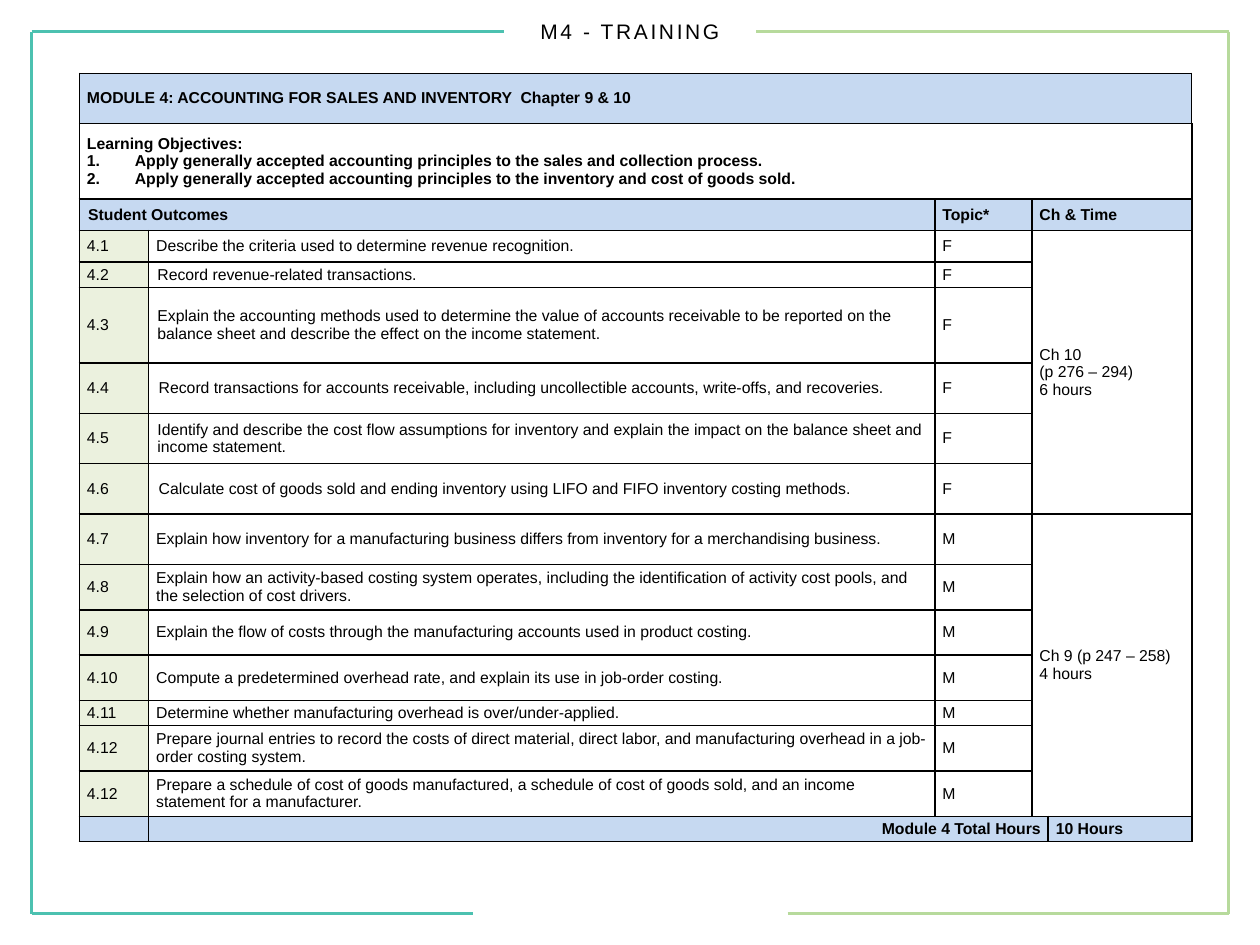
import pptx
import pptx.util
import pptx.dml.color
import pptx.enum.shapes
import pptx.enum.text
import pptx.oxml.ns
from lxml import etree

Inches, Pt = pptx.util.Inches, pptx.util.Pt
RGB = pptx.dml.color.RGBColor.from_string
ALIGN = pptx.enum.text.PP_ALIGN
MIDDLE = pptx.enum.text.MSO_ANCHOR.MIDDLE
qn = pptx.oxml.ns.qn
COLORS = {"teal": "4CC1B0", "lime": "B7DA9C", "heading": "C6D9F1",
          "number": "EBF1DE", "ink": "000000"}

deck = pptx.Presentation()
deck.slide_width, deck.slide_height = Inches(10), Inches(7.5)
W, H = deck.slide_width, deck.slide_height
slide = deck.slides.add_slide(deck.slide_layouts[6])


def add_text(paragraph, text, size=9, bold=False):
    run = paragraph.add_run()
    run.text = text
    run.font.name, run.font.size, run.font.bold = "Arial", Pt(size), bold
    run.font.color.rgb = RGB(COLORS["ink"])
    return run


def fill_cell(cell, lines, bold=False, fill=None, indent=0, spacing=0):
    """Write one paragraph per line and colour the cell."""
    if fill:
        cell.fill.solid()
        cell.fill.fore_color.rgb = RGB(COLORS[fill])
    for i, line in enumerate(lines):
        paragraph = cell.text_frame.paragraphs[0] if i == 0 else cell.text_frame.add_paragraph()
        if indent:
            paragraph._p.get_or_add_pPr().set("marL", str(Inches(indent)))
        if spacing:
            paragraph.space_after = Pt(spacing)
        add_text(paragraph, line, bold=bold)


# Frame: two brackets open at the top and bottom centre
left, right, top, bottom = 0.025 * W, 0.975 * W, H / 30, H * 29 / 30
frame = [("teal", left, top, left, bottom), ("lime", right, top, right, bottom),
         ("teal", left, bottom, 0.375 * W, bottom), ("lime", 0.625 * W, bottom, right, bottom),
         ("teal", left, top, 0.4 * W, top), ("lime", 0.6 * W, top, right, top)]
for color, *ends in frame:
    edge = slide.shapes.add_connector(pptx.enum.shapes.MSO_CONNECTOR.STRAIGHT,
                                      *[round(end) for end in ends])
    edge.line.color.rgb = RGB(COLORS[color])
    edge.line.width = Pt(2.25)
    etree.SubElement(edge._element.spPr, qn("a:effectLst"))

title = slide.shapes.add_textbox(0, 0, W, H // 15).text_frame
title.word_wrap = True
title.vertical_anchor = MIDDLE
title.paragraphs[0].alignment = ALIGN.CENTER
title_run = add_text(title.paragraphs[0], "M4 - TRAINING", size=12)
title_run._r.get_or_add_rPr().set("spc", "150")

# Outcomes: number, text, topic, indent, spacing
outcomes = [
    ("4.1", "Describe the criteria used to determine revenue recognition.", "F", 0, 0),
    ("4.2", "Record revenue-related transactions.", "F", 0.01, 0),
    ("4.3", "Explain the accounting methods used to determine the value of accounts receivable to be "
     "reported on the balance sheet and describe the effect on the income statement.", "F", 0.01, 0),
    ("4.4", "Record transactions for accounts receivable, including uncollectible accounts, "
     "write-offs, and recoveries.", "F", 0.02, 0),
    ("4.5", "Identify and describe the cost flow assumptions for inventory and explain the impact "
     "on the balance sheet and income statement.", "F", 0.01, 0),
    ("4.6", "Calculate cost of goods sold and ending inventory using LIFO and FIFO inventory "
     "costing methods.", "F", 0.02, 0),
    ("4.7", "Explain how inventory for a manufacturing business differs from inventory for a "
     "merchandising business.", "M", 0, 0),
    ("4.8", "Explain how an activity-based costing system operates, including the identification "
     "of activity cost pools, and the selection of cost drivers.", "M", 0, 2),
    ("4.9", "Explain the flow of costs through the manufacturing accounts used in product "
     "costing.", "M", 0, 2),
    ("4.10", "Compute a predetermined overhead rate, and explain its use in job-order costing.",
     "M", 0, 0),
    ("4.11", "Determine whether manufacturing overhead is over/under-applied.", "M", 0, 0),
    ("4.12", "Prepare journal entries to record the costs of direct material, direct labor, and "
     "manufacturing overhead in a job-order costing system.", "M", 0, 2),
    ("4.12", "Prepare a schedule of cost of goods manufactured, a schedule of cost of goods sold, "
     "and an income statement for a manufacturer.", "M", 0, 2),
]
column_widths = [0.55, 6.24, 0.77, 0.13, 1.14]
row_heights = [0.4, 0.6, 0.25, 0.25, 0.2, 0.6] + [0.4] * 4 + [0.36] * 3 + [0.2, 0.36, 0.36, 0.2]
first_outcome, total_row = 3, len(row_heights) - 1
module = slide.shapes.add_table(
    len(row_heights), len(column_widths), Inches(0.63), Inches(0.58),
    Inches(sum(column_widths)), Inches(sum(row_heights))).table
module.first_row = module.horz_banding = False
for column, width in zip(module.columns, column_widths):
    column.width = Inches(width)
for row, height in zip(module.rows, row_heights):
    row.height = Inches(height)

for r in range(len(row_heights)):
    for c in range(len(column_widths)):
        cell = module.cell(r, c)
        cell.vertical_anchor = MIDDLE
        cell.margin_left = cell.margin_right = Inches(0.06)
        cell.margin_top = cell.margin_bottom = 0
        cell.text_frame.paragraphs[0]._p.get_or_add_endParaRPr().set("sz", "900")
        properties = cell._tc.get_or_add_tcPr()
        for side in ("lnL", "lnR", "lnT", "lnB"):
            thin = r == 0 or (r == 1 and side == "lnT")
            border = etree.SubElement(properties, qn("a:" + side), w=str(Pt(0.5 if thin else 1)))
            ink = etree.SubElement(border, qn("a:solidFill"))
            etree.SubElement(ink, qn("a:srgbClr"), val=COLORS["ink"])
        cell.fill.background()

# Merged areas: first row, first column, last row, last column
for r1, c1, r2, c2 in [(0, 0, 0, 4), (1, 0, 1, 4), (2, 0, 2, 1), (2, 3, 2, 4),
                       (3, 3, 8, 4), (9, 3, 15, 4), (total_row, 1, total_row, 3)]:
    module.cell(r1, c1).merge(module.cell(r2, c2))

fill_cell(module.cell(0, 0), ["MODULE 4: ACCOUNTING FOR SALES AND INVENTORY  Chapter 9 & 10"],
          bold=True, fill="heading")
objectives = module.cell(1, 0)
fill_cell(objectives, [
    "Learning Objectives:",
    "Apply generally accepted accounting principles to the sales and collection process.",
    "Apply generally accepted accounting principles to the inventory and cost of goods sold.",
], bold=True)
for objective in objectives.text_frame.paragraphs[1:]:
    numbering = objective._p.get_or_add_pPr()
    numbering.set("marL", str(Inches(0.38)))
    numbering.set("indent", str(-Inches(0.38)))
    etree.SubElement(numbering, qn("a:buFont"), typeface="+mj-lt")
    etree.SubElement(numbering, qn("a:buAutoNum"), type="arabicPeriod")

for c, heading, indent in [(0, "Student Outcomes", 0.01), (2, "Topic*", 0), (3, "Ch & Time", 0)]:
    fill_cell(module.cell(2, c), [heading], bold=True, fill="heading", indent=indent)

for r, (number, outcome, topic, indent, spacing) in enumerate(outcomes, first_outcome):
    fill_cell(module.cell(r, 0), [number], fill="number")
    fill_cell(module.cell(r, 1), [outcome], indent=indent, spacing=spacing)
    fill_cell(module.cell(r, 2), [topic])
fill_cell(module.cell(3, 3), ["Ch 10", "(p 276 – 294)", "6 hours"])
fill_cell(module.cell(9, 3), ["Ch 9 (p 247 – 258)", "4 hours"])

fill_cell(module.cell(total_row, 0), [], fill="heading")
fill_cell(module.cell(total_row, 1), ["Module 4 Total Hours"], bold=True, fill="heading")
module.cell(total_row, 1).text_frame.paragraphs[0].alignment = ALIGN.RIGHT
fill_cell(module.cell(total_row, 4), ["10 Hours"], bold=True, fill="heading")

deck.save("out.pptx")
